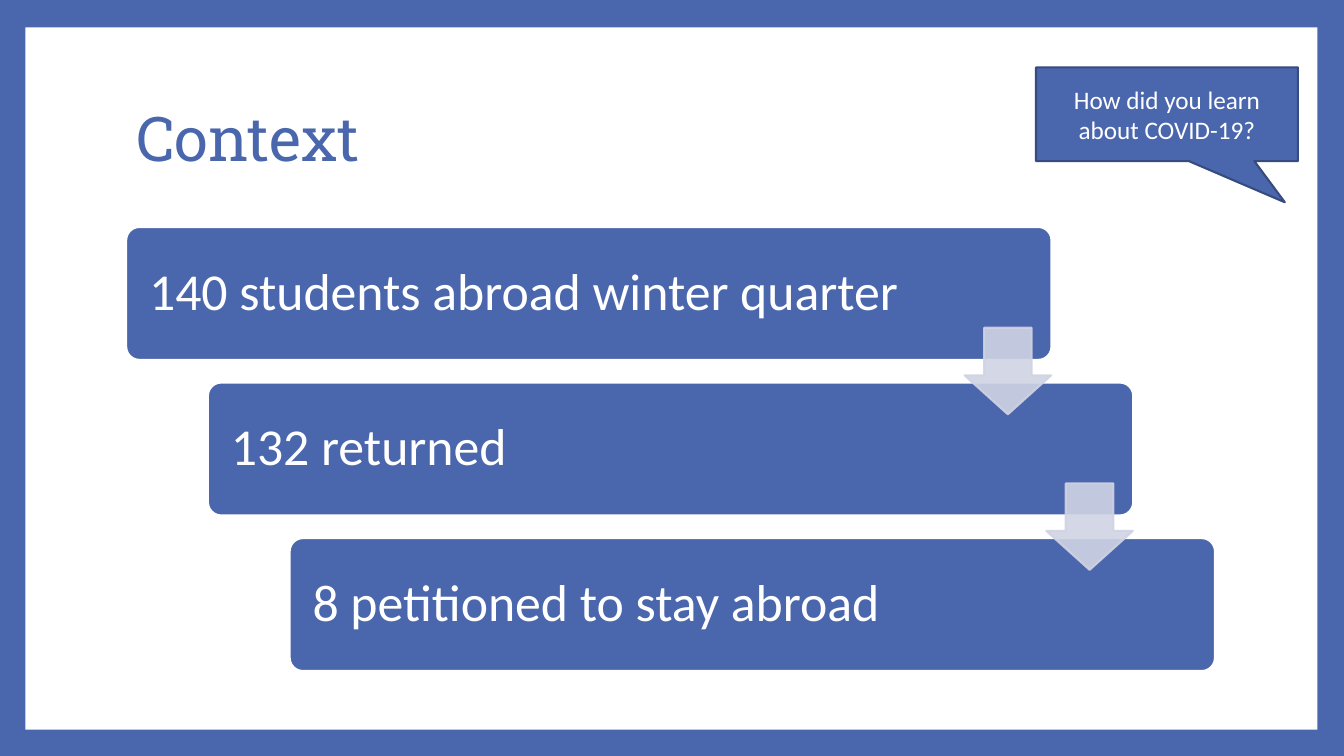
from lxml.etree import SubElement
from pptx import Presentation
from pptx.dml.color import RGBColor as Rgb
from pptx.enum.shapes import MSO_SHAPE as Kind
from pptx.enum.text import MSO_ANCHOR as Anchor, PP_ALIGN as Align
from pptx.oxml.ns import qn
from pptx.util import Cm, Pt

HUES = {"blue": "4A66AC", "edge": "374B7F", "pale": "D0D3E3", "white": "FFFFFF"}


class Deck:
    """Hold the style and the current slide, and draw each kind of element."""

    def __init__(self):
        self.show = Presentation()
        self.show.slide_width, self.show.slide_height = Cm(33.87), Cm(19.05)
        self.slide = self.show.slides.add_slide(self.show.slide_layouts[6])
        self.paint(self.slide.background.fill, "blue")

    def paint(self, fill, hue):
        fill.solid()
        fill.fore_color.rgb = Rgb.from_string(HUES[hue])

    def shape(self, kind, box, hue, edge=None, adj=()):
        item = self.slide.shapes.add_shape(kind, *map(Cm, box))
        item.shadow.inherit = False
        self.paint(item.fill, hue)
        if edge:
            self.paint(item.line.fill, edge)
            item.line.width = Pt(1.5)
        else:
            item.line.fill.background()
        for i, part in enumerate(adj):
            item.adjustments[i] = part
        return item

    def label(self, item, text, size, hue="white", font="Calibri",
              align=Align.LEFT, space=1.0, inset=0.25):
        frame = item.text_frame
        frame.word_wrap = True
        frame.vertical_anchor = Anchor.MIDDLE
        frame.margin_left = frame.margin_right = Cm(inset)
        para = frame.paragraphs[0]
        para.text = text
        para.alignment = align
        para.line_spacing = space
        para.font.size = Pt(size)
        para.font.name = font
        para.font.color.rgb = Rgb.from_string(HUES[hue])

    def title(self, text, box):
        item = self.slide.shapes.add_textbox(*map(Cm, box))
        self.label(item, text, 44, "blue", "Roboto Slab", space=0.9)

    def step(self, text, box):
        item = self.shape(Kind.ROUNDED_RECTANGLE, box, "blue", "white", [0.1])
        self.label(item, text, 37, space=0.9, inset=0.48)

    def arrow(self, box):
        item = self.shape(Kind.DOWN_ARROW, box, "pale", "pale", [0.55, 0.45])
        for tint in item.element.spPr.iter(qn("a:srgbClr")):
            SubElement(tint, qn("a:alpha"), val="90000")

    def callout(self, text, box):
        item = self.shape(Kind.RECTANGULAR_CALLOUT, box, "blue", "edge", [0.45, 0.94])
        self.label(item, text, 18, align=Align.CENTER)


def main():
    deck = Deck()
    deck.shape(Kind.RECTANGLE, (0.64, 0.69, 32.56, 17.7), "white")
    deck.title("Context", (3.18, 1.7, 27.43, 3.76))
    steps = ["140 students abroad winter quarter", "132 returned",
             "8 petitioned to stay abroad"]
    right, down = 2.06, 3.92
    for i, text in enumerate(steps):
        deck.step(text, (3.18 + i * right, 5.72 + i * down, 23.32, 3.35))
    for i in range(len(steps) - 1):
        deck.arrow((24.31 + i * right, 8.26 + i * down, 2.18, 2.18))
    deck.callout("How did you learn about COVID-19?", (26.11, 1.7, 6.6, 2.36))
    deck.show.save("out.pptx")


if __name__ == "__main__":
    main()
